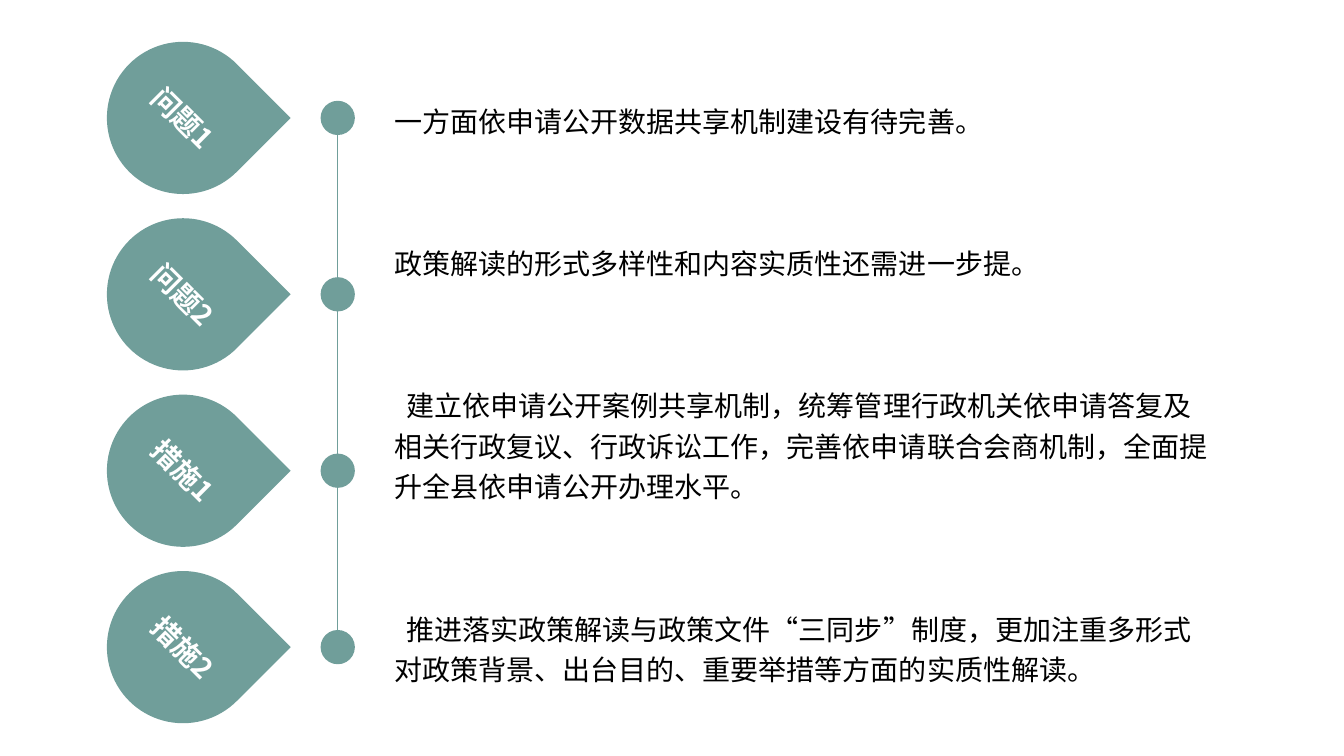
"""Build a slide with a timeline of two problems and two measures."""
from lxml import etree
from pptx import Presentation
from pptx.dml.color import RGBColor
from pptx.enum import shapes, text
from pptx.oxml.ns import qn
from pptx.util import Inches, Pt

FONT = "Noto Sans CJK SC"
COLORS = {"teal": "709E9A", "white": "FFFFFF", "black": "000000"}

# label, text, text top, text height, first-line indent
ROWS = [
    ("问题1", "一方面依申请公开数据共享机制建设有待完善。", 0.92, 0.5, 0),
    ("问题2", "政策解读的形式多样性和内容实质性还需进一步提。", 2.33, 0.5, 0),
    ("措施1", "建立依申请公开案例共享机制，统筹管理行政机关依申请答复及相关行政复议、"
     "行政诉讼工作，完善依申请联合会商机制，全面提升全县依申请公开办理水平。", 3.74, 1.31, 0.12),
    ("措施2", "推进落实政策解读与政策文件“三同步”制度，更加注重多形式对政策背景、"
     "出台目的、重要举措等方面的实质性解读。", 5.96, 0.91, 0.12),
]
FIRST_CENTER, PITCH = 1.17, 1.75
DROP_X, DROP = 1.06, 1.51
AXIS_X, DOT = 3.35, 0.34
TEXT_X, TEXT_W = 3.81, 8.28


def color(name):
    return RGBColor.from_string(COLORS[name])


def write(tf, content, ink, bold=False, indent=0):
    tf.word_wrap = True
    p = tf.paragraphs[0]
    p.text = content
    if indent:
        p._p.get_or_add_pPr().set("indent", str(Inches(indent)))
    p.font.name, p.font.size, p.font.bold = FONT, Pt(20), bold
    p.font.color.rgb = color(ink)
    latin = p._p.pPr.find(qn("a:defRPr")).find(qn("a:latin"))
    ea = etree.Element(qn("a:ea"), typeface=FONT)
    latin.addnext(ea)
    return p


def add_teal(s, kind, x, y, size):
    sp = s.shapes.add_shape(kind, Inches(x), Inches(y), Inches(size), Inches(size))
    sp.shadow.inherit = False
    sp.fill.solid()
    sp.fill.fore_color.rgb = color("teal")
    sp.line.fill.background()
    return sp


def add_axis(s):
    last_center = FIRST_CENTER + PITCH * (len(ROWS) - 1)
    line = s.shapes.add_connector(shapes.MSO_CONNECTOR.STRAIGHT, Inches(AXIS_X),
                                  Inches(FIRST_CENTER), Inches(AXIS_X), Inches(last_center))
    line.line.color.rgb = color("teal")
    line.line.width = Pt(0.5)
    etree.SubElement(line._element.spPr, qn("a:effectLst"))


def add_row(s, center, label, content, top, height, indent):
    drop = add_teal(s, shapes.MSO_SHAPE.TEAR, DROP_X, center - DROP / 2, DROP)
    drop.rotation = 45
    drop.text_frame.vertical_anchor = text.MSO_ANCHOR.MIDDLE
    write(drop.text_frame, label, "white", bold=True).alignment = text.PP_ALIGN.CENTER
    add_teal(s, shapes.MSO_SHAPE.OVAL, AXIS_X - DOT / 2, center - DOT / 2, DOT)
    box = s.shapes.add_textbox(Inches(TEXT_X), Inches(top), Inches(TEXT_W), Inches(height))
    write(box.text_frame, content, "black", indent=indent).line_spacing = 1.2
    box.text_frame.auto_size = text.MSO_AUTO_SIZE.SHAPE_TO_FIT_TEXT


def main():
    prs = Presentation()
    prs.slide_width, prs.slide_height = Inches(13.33), Inches(7.5)
    s = prs.slides.add_slide(prs.slide_layouts[6])
    add_axis(s)
    for i, row in enumerate(ROWS):
        add_row(s, FIRST_CENTER + PITCH * i, *row)
    prs.save("out.pptx")


if __name__ == "__main__":
    main()
